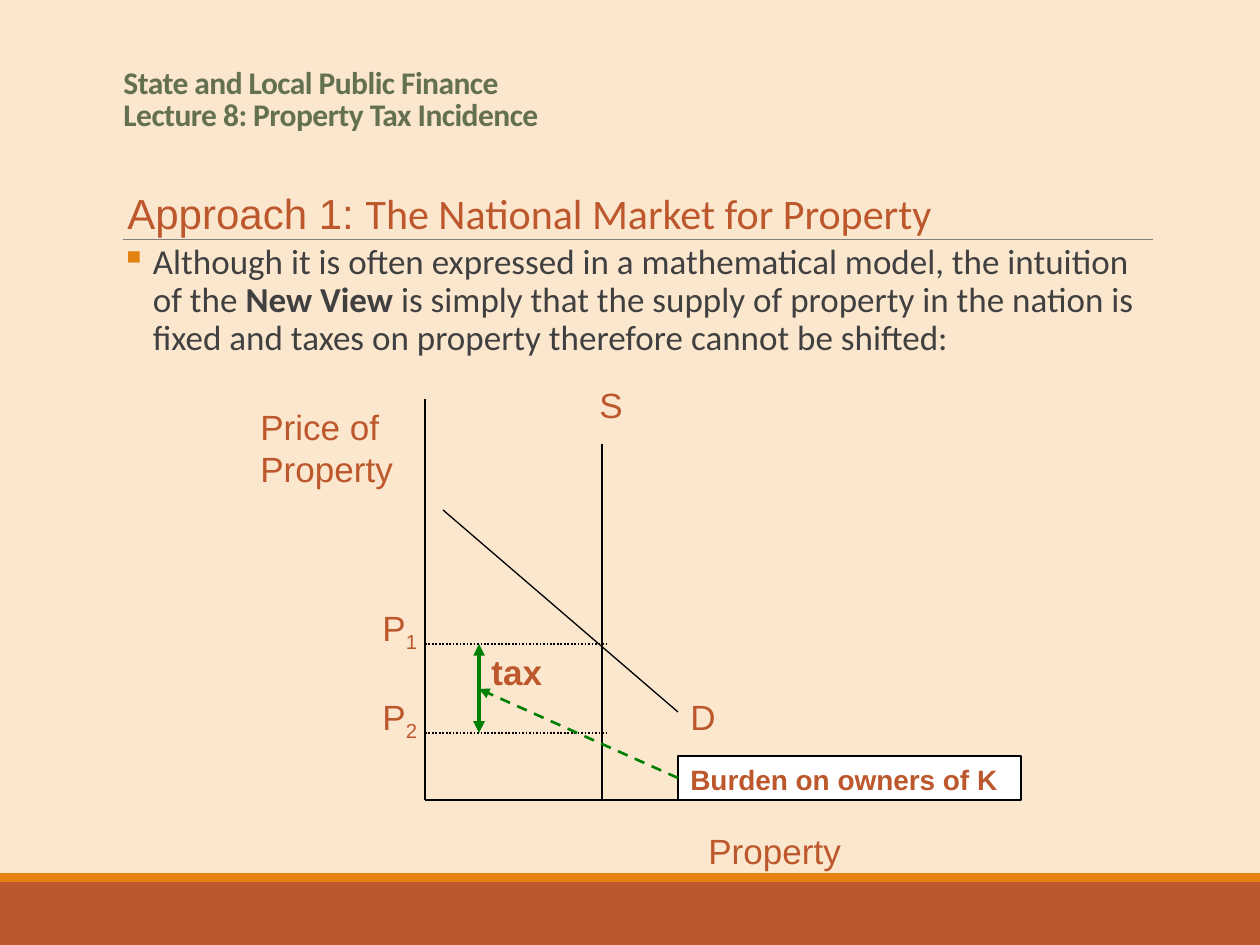
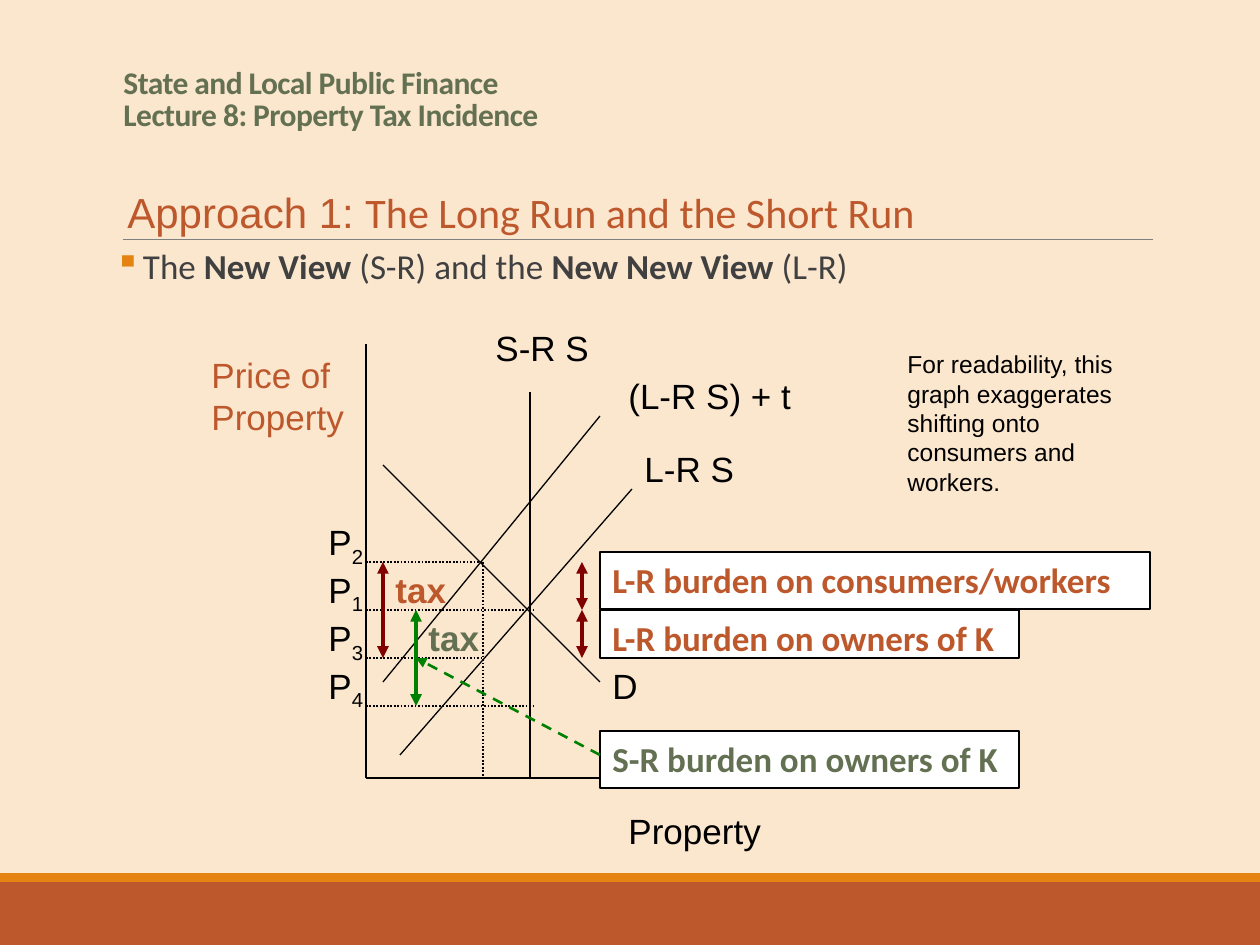
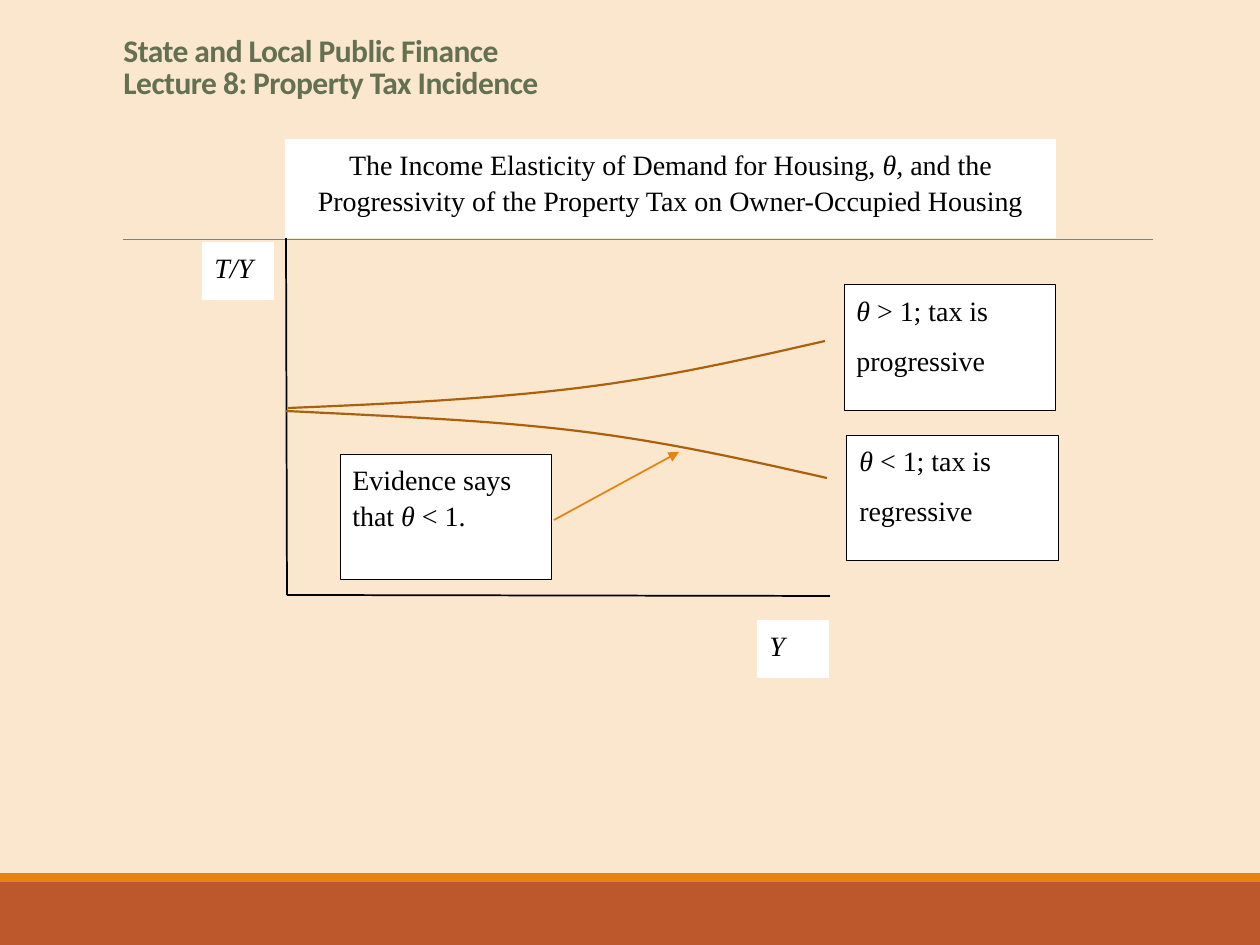
from lxml import etree
from pptx import Presentation
from pptx import util as u
from pptx.dml.color import RGBColor
from pptx.enum import dml, shapes, text
from pptx.oxml.ns import qn

EMU_PER_PX = 914400 / 126
COLORS = {
    "cream": "FBE6CE", "rust": "BD582C", "orange": "E48312", "gray": "808080",
    "ink": "404040", "olive": "637052", "black": "000000", "white": "FFFFFF",
    "green": "008000", "maroon": "800000", "brown": "A9610D",
}
DOTS = dml.MSO_LINE.ROUND_DOT
DASHES = dml.MSO_LINE.DASH
END = ("tailEnd",)
BOTH = ("headEnd", "tailEnd")
LECTURE = "State and Local Public Finance\vLecture 8: Property Tax Incidence"


def px(length):
    return u.Emu(round(length * EMU_PER_PX))


def rgb(name):
    return RGBColor.from_string(COLORS[name])


def bezier(start, control1, control2, end, steps=16):
    """Points along a cubic curve, without its start."""
    for step in range(1, steps + 1):
        t = step / steps
        weights = ((1 - t) ** 3, 3 * t * (1 - t) ** 2, 3 * t * t * (1 - t), t ** 3)
        corners = (start, control1, control2, end)
        yield tuple(sum(w * corner[axis] for w, corner in zip(weights, corners))
                    for axis in (0, 1))


class Lecture:
    """The deck's style and the page being drawn; lengths are in px."""

    def __init__(self):
        self.deck = Presentation()
        self.deck.slide_width, self.deck.slide_height = px(1260), px(945)
        self.page = None

    def new_page(self, title_top=42):
        self.page = self.deck.slides.add_slide(self.deck.slide_layouts[6])
        self.page.background.fill.solid()
        self.page.background.fill.fore_color.rgb = rgb("cream")
        self.panel((0, 882, 1260, 63), fill="rust")
        self.panel((0, 873, 1260, 9), fill="orange")
        self.line((123, 239), (1153, 239), "gray", 0.5)
        title = self.label((111, title_top, 1040, 97), LECTURE, "olive", 18,
                           "Calibri", bold=True, spacing=0.85)
        title.text_frame.vertical_anchor = text.MSO_ANCHOR.BOTTOM
        for span in title.text_frame.paragraphs[0].runs:
            span.font._element.set("spc", "-30")

    def fill_text(self, frame, paragraphs, color="black", size=20, font="Arial",
                  bold=False, spacing=None, after=None):
        """Fill a frame; a paragraph is a string or a list of (text, mark).

        Marks: b bold, i italic, s subscript, c Calibri.
        """
        frame.word_wrap = True
        frame.vertical_anchor = text.MSO_ANCHOR.TOP
        if isinstance(paragraphs, str):
            paragraphs = [paragraphs]
        for index, content in enumerate(paragraphs):
            para = frame.add_paragraph() if index else frame.paragraphs[0]
            para.alignment = text.PP_ALIGN.LEFT
            para.line_spacing = spacing
            if after:
                para.space_after = u.Pt(after)
            marks = {}
            if isinstance(content, str):
                para.text = content
            else:
                for position, (words, mark) in enumerate(content):
                    para.add_run().text = words
                    marks[position] = mark
            for position, span in enumerate(para.runs):
                mark = marks.get(position, "")
                span.font.size = u.Pt(size)
                span.font.name = "Calibri" if mark == "c" else font
                span.font.color.rgb = rgb(color)
                span.font.bold = bold or mark == "b"
                span.font.italic = mark == "i"
                if mark == "s":
                    span.font._element.set("baseline", "-25000")

    def label(self, area, paragraphs, *style, **options):
        box = self.page.shapes.add_textbox(*map(px, area))
        self.fill_text(box.text_frame, paragraphs, *style, **options)
        return box

    def panel(self, area, paragraphs=None, fill="white", border=None, **style):
        box = self.page.shapes.add_shape(shapes.MSO_SHAPE.RECTANGLE, *map(px, area))
        box.shadow.inherit = False
        box.fill.solid()
        box.fill.fore_color.rgb = rgb(fill)
        if border:
            box.line.color.rgb = rgb("black")
            box.line.width = u.Pt(border)
        else:
            box.line.fill.background()
        if paragraphs:
            self.fill_text(box.text_frame, paragraphs, **style)
        return box

    def note(self, area, paragraphs, border=None):
        return self.panel(area, paragraphs, border=border, size=16,
                          font="Times New Roman", spacing=1.07, after=8)

    def line(self, start, end, color="black", width=0.75, dash=None, heads=()):
        connector = self.page.shapes.add_connector(
            shapes.MSO_CONNECTOR.STRAIGHT, *map(px, start + end))
        connector.line.color.rgb = rgb(color)
        connector.line.width = u.Pt(width)
        if dash:
            connector.line.dash_style = dash
        properties = connector._element.spPr
        for head in heads:
            etree.SubElement(properties.find(qn("a:ln")), qn("a:" + head), type="triangle")
        etree.SubElement(properties, qn("a:effectLst"))

    def curve(self, start, *pieces):
        """Draw joined cubic pieces, each given as two controls and an end."""
        points = [start]
        for piece in pieces:
            points.extend(bezier(points[-1], *piece))
        points = [tuple(map(px, point)) for point in points]
        builder = self.page.shapes.build_freeform(*points[0])
        builder.add_line_segments(points[1:], close=False)
        outline = builder.convert_to_shape()
        outline.shadow.inherit = False
        outline.fill.background()
        outline.line.color.rgb = rgb("brown")
        outline.line.width = u.Pt(1.25)

    def heading(self, area, topic):
        self.label(area, [[("Approach 1: ", ""), (topic, "c")]], "rust", 24)

    def bullet(self, area, content, indent, spacing):
        box = self.label(area, [content], "ink", 20, "Calibri", spacing=spacing, after=1.1)
        box.text_frame.margin_left = box.text_frame.margin_right = 0
        para = box.text_frame.paragraphs[0]
        para.space_before = u.Pt(6.8)
        properties = para._p.get_or_add_pPr()
        properties.set("marL", str(px(indent)))
        properties.set("indent", str(-px(indent)))
        color = etree.SubElement(properties, qn("a:buClr"))
        etree.SubElement(color, qn("a:srgbClr"), val=COLORS["orange"])
        etree.SubElement(properties, qn("a:buChar"), char="▪")

    def price(self, number, axis, y, end, label_shift, color="black"):
        """A dotted price level from the axis, with its P label."""
        left, up = label_shift
        self.line((axis, y), (end, y), width=1, dash=DOTS)
        self.label((axis - left, y - up, 72, 70), [[("P", ""), (number, "s")]], color)

    def tax(self, x, top, bottom, arrow, color):
        self.line((x, top), (x, bottom), arrow, 2.25, heads=BOTH)
        self.label((x, top, 95, 90), "tax", color, bold=True)


def national_market(lecture):
    lecture.new_page()
    lecture.heading((115, 181, 838, 63), "The National Market for Property")
    lecture.bullet((121, 238, 1034, 137), [
        ("Although it is often expressed in a mathematical model, the intuition of the ", ""),
        ("New View ", "b"),
        ("is simply that the supply of property in the nation is fixed and taxes on "
         "property therefore cannot be shifted:", "")], 32, 0.9)
    axis, base = 425, 800
    lecture.line((axis, 399), (axis, base))
    lecture.line((axis, base), (732, base))
    lecture.line((443, 510), (678, 712))
    lecture.line((602, base), (602, 444))
    for area, words in (
            ((248, 399, 160, 90), "Price of Property"),
            ((696, 823, 270, 90), "Property"),
            ((678, 689, 91, 67), "D"),
            ((587, 377, 145, 67), "S")):
        lecture.label(area, words, "rust")
    for number, y in (("1", 644), ("2", 733)):
        lecture.price(number, axis, y, 606, (55, 44), "rust")
    lecture.panel((678, 756, 343, 44), "Burden on owners of K", border=0.75,
                  color="rust", size=16, bold=True)
    lecture.line((678, 778), (479, 689), "green", 1.5, DASHES, END)
    lecture.tax(479, 644, 733, "green", "rust")


def long_and_short_run(lecture):
    lecture.new_page()
    lecture.heading((115, 180, 820, 63), "The Long Run and the Short Run")
    lecture.bullet((115, 246, 852, 48), [
        ("The ", ""), ("New View", "b"), (" (S-R) and the ", ""),
        ("New New View ", "b"), ("(L-R)", "")], 28, 0.8)
    axis, base = 366, 778
    for start, end in (
            ((axis, 344), (axis, base)), ((axis, base), (649, base)),
            ((383, 465), (600, 682)), ((383, 682), (600, 416)),
            ((400, 755), (632, 489)), ((530, base), (530, 392))):
        lecture.line(start, end)
    for area, words in (
            ((616, 803, 246, 97), "Property"),
            ((632, 441, 134, 73), "L-R S"),
            ((616, 368, 217, 72), "(L-R S) + t"),
            ((600, 658, 83, 73), "D"),
            ((483, 320, 134, 73), "S-R S")):
        lecture.label(area, words)
    lecture.label((199, 347, 160, 90), "Price of Property", "rust")
    lecture.label((895, 343, 247, 161),
                  "For readability, this graph exaggerates shifting onto consumers and workers.",
                  size=14)
    levels = [562 + 48 * row for row in range(4)]
    for number, y, end in zip("2134", levels, (483, 533, 483, 533)):
        lecture.price(number, axis, y, end, (50, 48))
    lecture.line((483, levels[0]), (483, base), width=1, dash=DOTS)
    for area, words, color in (
            ((600, 552, 550, 57), "L-R burden on consumers/workers", "rust"),
            ((600, 610, 419, 48), "L-R burden on owners of K", "rust"),
            ((600, 731, 419, 57), "S-R burden on owners of K", "olive")):
        lecture.panel(area, words, border=0.75, color=color, font="Calibri", bold=True)
    for top, bottom in zip(levels[:2], levels[1:3]):
        lecture.line((582, top), (582, bottom), "maroon", 2.25, heads=BOTH)
    lecture.tax(383, levels[0], levels[2], "maroon", "rust")
    lecture.tax(416, levels[1], levels[3], "green", "olive")
    lecture.line((600, 755), (416, levels[2]), "green", 1.5, DASHES, END)


def income_elasticity(lecture):
    lecture.new_page(title_top=10)
    lecture.line((286, 227), (287, 595), width=1)
    lecture.line((287, 595), (830, 596), width=1)
    lecture.note((202, 242, 72, 58), [[("T/Y", "i")]])
    lecture.note((757, 620, 72, 58), [[("Y", "i")]])
    lecture.curve((288, 408), ((388, 404), (489, 399), (578, 388)),
                  ((668, 377), (746, 359), (825, 341)))
    lecture.curve((286, 411), ((386, 416), (488, 420), (578, 431)),
                  ((668, 442), (747, 460), (827, 478)))
    for left, top, paragraphs in (
            (844, 285, [[("θ", "i"), (" > 1; tax is", "")], "progressive"]),
            (847, 435, [[("θ", "i"), (" < 1; tax is", "")], "regressive"]),
            (340, 454, [[("Evidence says that", ""), (" θ", "i"), (" < 1.", "")]])):
        lecture.note((left, top, 212, 126), paragraphs, border=0.5)
    lecture.line((554, 520), (679, 452), "orange", 1, heads=END)
    caption = lecture.note((285, 139, 771, 99), [[
        ("The Income Elasticity of Demand for Housing, ", ""), ("θ, ", "i"),
        ("and the Progressivity of the Property Tax on Owner-Occupied Housing", "")]])
    caption.text_frame.paragraphs[0].alignment = text.PP_ALIGN.CENTER


def main():
    lecture = Lecture()
    national_market(lecture)
    long_and_short_run(lecture)
    income_elasticity(lecture)
    lecture.deck.save("out.pptx")


if __name__ == "__main__":
    main()
